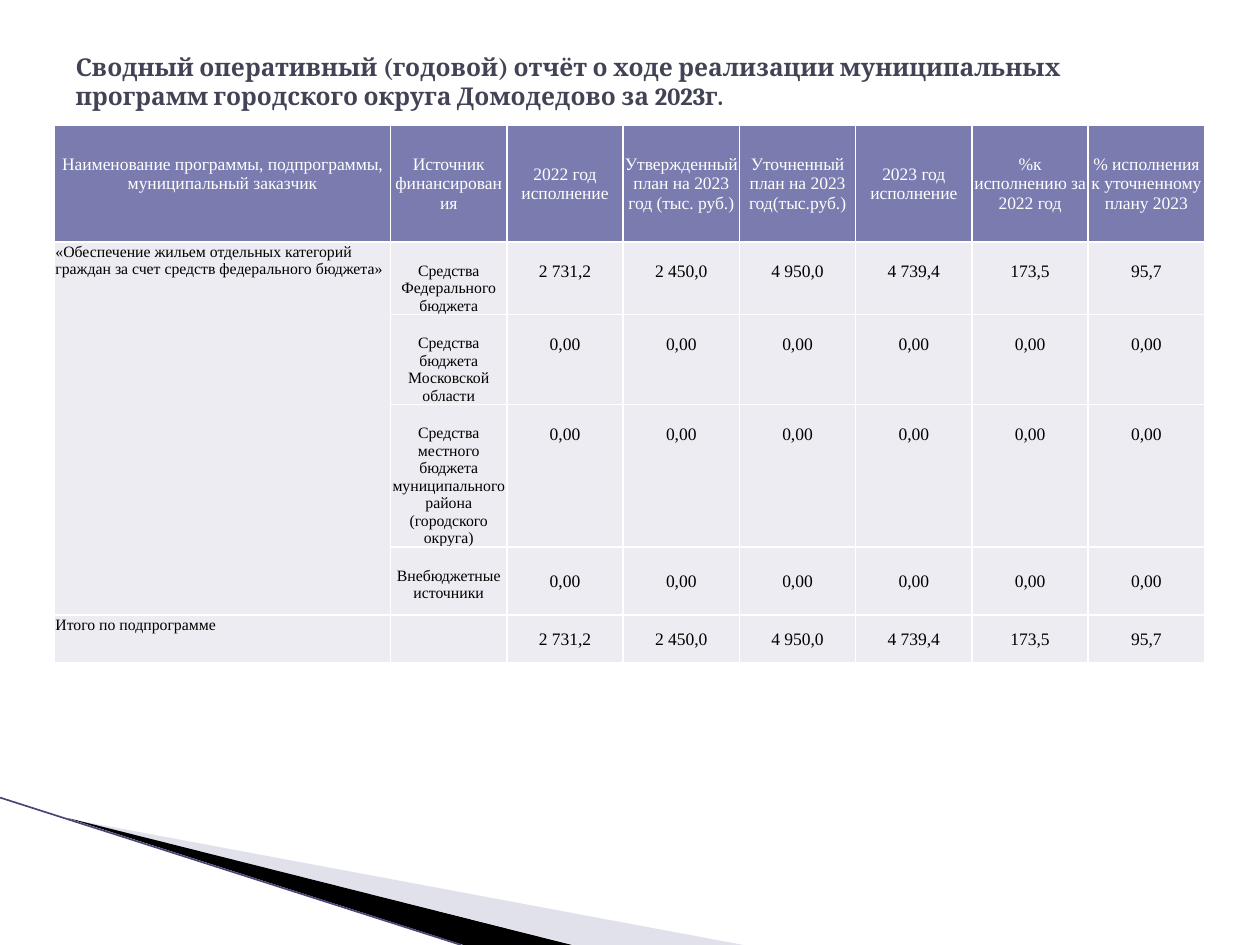
from lxml import etree
from pptx import Presentation
from pptx import util as u
from pptx.dml.color import RGBColor
from pptx.enum import shapes, text
from pptx.oxml import ns

INK = RGBColor(0x42, 0x44, 0x56)
BLACK = RGBColor(0, 0, 0)
WHITE = RGBColor(0xFF, 0xFF, 0xFF)
HEADER_FILL = RGBColor(0x7A, 0x7B, 0xAE)
BODY_FILL = RGBColor(0xEC, 0xEC, 0xF2)
VEIL = RGBColor(0xB6, 0xB6, 0xD1)
EDGE = RGBColor(0x47, 0x47, 0x78)

TITLE = ("Сводный оперативный (годовой) отчёт о ходе реализации муниципальных "
         "программ городского округа Домодедово за 2023г.")
HEADINGS = ["Наименование программы, подпрограммы, муниципальный заказчик",
            "Источник финансирования", "2022 год исполнение",
            "Утвержденный план на 2023 год (тыс. руб.)",
            "Уточненный план на 2023 год(тыс.руб.)", "2023 год исполнение",
            "%к исполнению за 2022 год", "% исполнения к уточненному плану 2023"]
PROGRAMME = ("«Обеспечение жильем отдельных категорий граждан "
             "за счет средств федерального бюджета»")
FIGURES = ["2 731,2", "2 450,0", "4 950,0", "4 739,4", "173,5", "95,7"]
ZEROS = ["0,00"] * len(FIGURES)
ROWS = [HEADINGS,
        [PROGRAMME, "Средства Федерального бюджета", *FIGURES],
        ["", "Средства бюджета Московской области", *ZEROS],
        ["", "Средства местного бюджета муниципального района (городского округа)", *ZEROS],
        ["", "Внебюджетные источники", *ZEROS],
        ["Итого по подпрограмме", "", *FIGURES]]
ROW_HEIGHTS = [0.93, 0.57, 0.7, 1.12, 0.54, 0.38]
FIRST_COLUMN = 2.67
OUTSIDE_ROW, TOTAL_ROW = 4, 5
BLANK_LINE = 0.16


def add_fan(slide, left, top, width, height):
    """Wedges and edge line in the bottom left corner of the box."""
    veil = [(0.55, 0.17), (width, height), (4.56, height)]
    shade = [(0.53, 0.16), (4.54, height), (3.68, height)]
    for points, colour, opacity in ((veil, VEIL, 40), (shade, BLACK, 100)):
        corners = [(u.Inches(left + x), u.Inches(top + y)) for x, y in points]
        builder = slide.shapes.build_freeform(*corners[0])
        builder.add_line_segments(corners[1:], close=True)
        wedge = builder.convert_to_shape()
        wedge.shadow.inherit = False
        wedge.line.fill.background()
        wedge.fill.solid()
        wedge.fill.fore_color.rgb = colour
        if opacity < 100:
            tint = next(wedge.element.spPr.iter(ns.qn("a:srgbClr")))
            etree.SubElement(tint, ns.qn("a:alpha"), val=str(opacity * 1000))
    edge = slide.shapes.add_connector(
        shapes.MSO_CONNECTOR.STRAIGHT, u.Inches(left), u.Inches(top),
        u.Inches(left + 3.66), u.Inches(top + height))
    edge.line.color.rgb = EDGE
    edge.line.width = u.Pt(0.95)
    etree.SubElement(edge.element.spPr, ns.qn("a:effectLst"))


def add_title(slide, left, top, width, height):
    title = slide.shapes.title
    title.left, title.top = u.Inches(left), u.Inches(top)
    title.width, title.height = u.Inches(width), u.Inches(height)
    frame = title.text_frame
    frame.text = TITLE
    frame.word_wrap = True
    frame.auto_size = text.MSO_AUTO_SIZE.NONE
    frame.vertical_anchor = text.MSO_ANCHOR.MIDDLE
    paragraph = frame.paragraphs[0]
    paragraph.alignment = text.PP_ALIGN.LEFT
    font = paragraph.runs[0].font
    font.name, font.size, font.bold = "Cambria", u.Pt(14), True
    font.color.rgb = INK


def add_borders(cell):
    properties = cell._tc.get_or_add_tcPr()
    for position, side in enumerate(("lnL", "lnR", "lnT", "lnB")):
        line = etree.Element(ns.qn(f"a:{side}"), w=str(u.Pt(1)))
        fill = etree.SubElement(line, ns.qn("a:solidFill"))
        etree.SubElement(fill, ns.qn("a:srgbClr"), val=str(WHITE))
        properties.insert(position, line)


def format_cell(cell, row, column, wording):
    header = row == 0
    is_figure = column > 1
    centred = header or (is_figure and row >= OUTSIDE_ROW)
    cell.fill.solid()
    cell.fill.fore_color.rgb = HEADER_FILL if header else BODY_FILL
    add_borders(cell)
    cell.margin_left = cell.margin_right = cell.margin_top = u.Inches(0.01)
    cell.margin_bottom = 0
    cell.vertical_anchor = text.MSO_ANCHOR.MIDDLE if centred else text.MSO_ANCHOR.TOP
    # One line of air: under the first heading, above top-anchored entries
    if header and column == 0:
        cell.margin_bottom = u.Inches(BLANK_LINE)
    elif column > 0 and not centred and row < TOTAL_ROW:
        cell.margin_top = u.Inches(BLANK_LINE)
    if not wording:
        return
    cell.text_frame.text = wording
    paragraph = cell.text_frame.paragraphs[0]
    paragraph.alignment = (text.PP_ALIGN.CENTER if header or column > 0
                           else text.PP_ALIGN.LEFT)
    font = paragraph.runs[0].font
    font.name, font.bold = "Times New Roman", False
    font.size = u.Pt(10 if header or is_figure else 9)
    font.color.rgb = WHITE if header else BLACK


def add_report(slide, left, top, width):
    """Budget table: one wide column, the rest sharing the remaining width."""
    columns = len(HEADINGS)
    table = slide.shapes.add_table(
        len(ROWS), columns, u.Inches(left), u.Inches(top),
        u.Inches(width), u.Inches(sum(ROW_HEIGHTS))).table
    narrow = (width - FIRST_COLUMN) / (columns - 1)
    for index, column in enumerate(table.columns):
        column.width = u.Inches(narrow if index else FIRST_COLUMN)
    for row, height in zip(table.rows, ROW_HEIGHTS):
        row.height = u.Inches(height)
    for row, entries in enumerate(ROWS):
        for column, wording in enumerate(entries):
            format_cell(table.cell(row, column), row, column, wording)
    table.cell(1, 0).merge(table.cell(OUTSIDE_ROW, 0))


def main():
    deck = Presentation()
    deck.slide_width, deck.slide_height = u.Inches(10), u.Inches(7.5)
    slide = deck.slides.add_slide(deck.slide_layouts[5])
    add_fan(slide, 0, 6.33, 5.9, 1.17)
    add_title(slide, 0.5, 0.3, 9, 0.69)
    add_report(slide, 0.43, 0.99, 9.13)
    deck.save("out.pptx")


if __name__ == "__main__":
    main()
